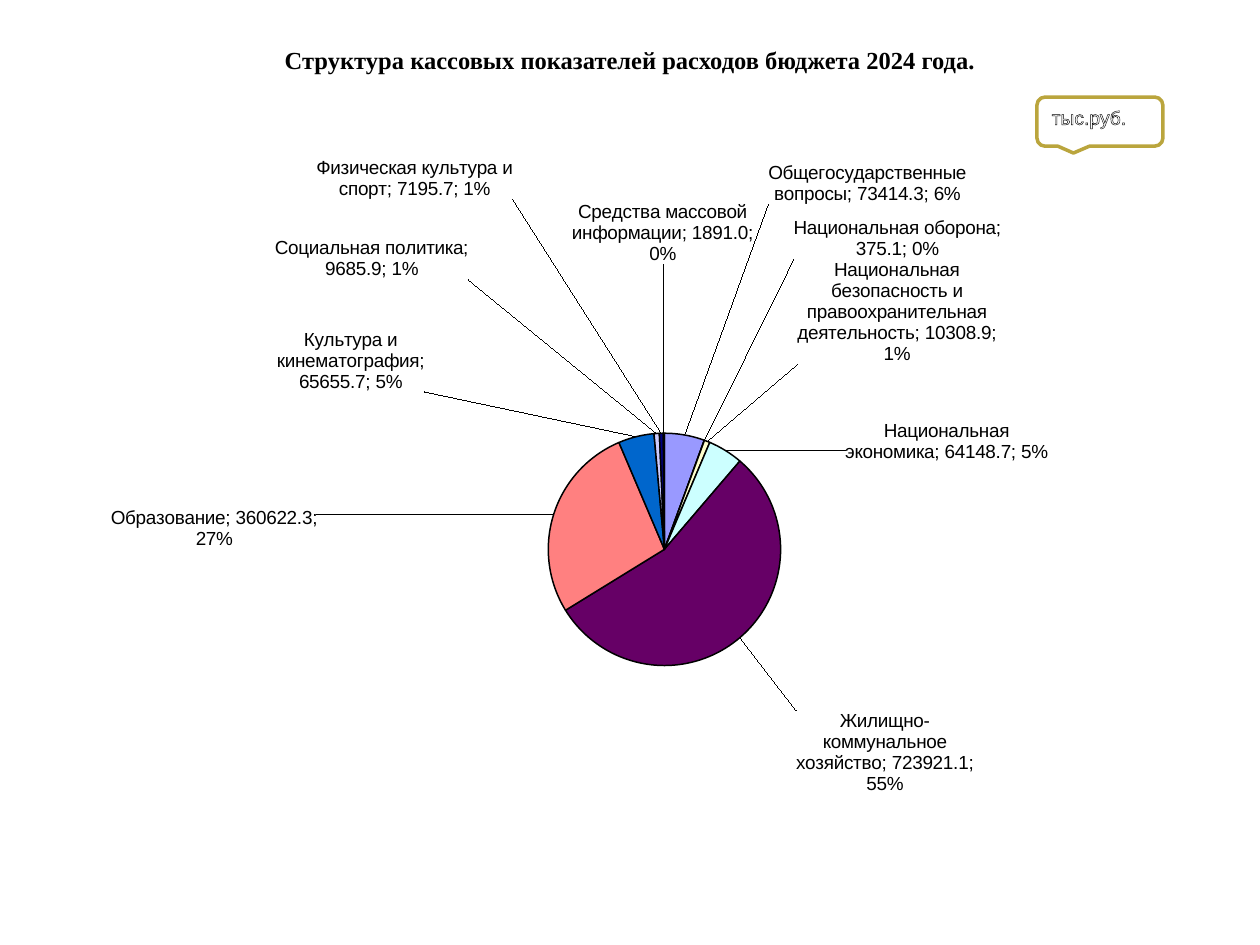
import copy
import math
from lxml import etree
from pptx import Presentation
from pptx import util as u
from pptx.chart import data as chart_data
from pptx.dml import color
from pptx.enum import chart as charts, shapes, text
from pptx.oxml import ns

COLORS = {"black": "000000", "white": "FFFFFF", "gold": "BAA53D"}
CHART_BOX = (0.88, 1.12, 8.41, 5.93)
PLOT = {"x": 0.284, "y": 0.391, "w": 0.477, "h": 0.311}
LABEL_GAP = 0.06

EXPENSES = [
    ("Общегосударственные вопросы", 73414.3, "9999FF", (6.1, 1.62)),
    ("Национальная оборона", 375.1, "FF9966", (6.3, 2.06)),
    ("Национальная безопасность и правоохранительная деятельность",
     10308.9, "FFFFCC", (6.33, 2.89)),
    ("Национальная экономика", 64148.7, "CCFFFF", (6.71, 3.67)),
    ("Жилищно-коммунальное хозяйство", 723921.1, "660066", (6.32, 5.64)),
    ("Образование", 360622.3, "FF8080", (2.51, 4.36)),
    ("Культура и кинематография", 65655.7, "0066CC", (3.37, 3.11)),
    ("Социальная политика", 9685.9, "CCCCFF", (2.95, 2.22)),
    ("Физическая культура и спорт", 7195.7, "000080", (3.29, 1.58)),
    ("Средства массовой информации", 1891.0, "000000", (5.26, 2.1)),
]


def rgb(value):
    return color.RGBColor.from_string(value)


def add_element(parent, tag, value=None):
    element = etree.SubElement(parent, ns.qn(tag))
    if value is not None:
        element.set("val", str(value))
    return element


def add_layout(parent, values):
    manual = add_element(add_element(parent, "c:layout"), "c:manualLayout")
    for name, value in values.items():
        add_element(manual, f"c:{name}", value)
    return manual.getparent()


def set_values(target, values):
    for name, value in values.items():
        setattr(target, name, value)


def label_offsets():
    left, top, width, height = CHART_BOX
    center_x = left + width * (PLOT["x"] + PLOT["w"] / 2)
    center_y = top + height * (PLOT["y"] + PLOT["h"] / 2)
    radius = height * PLOT["h"] / 2 + LABEL_GAP
    total = sum(expense[1] for expense in EXPENSES)
    passed = 0
    for _, value, _, (x, y) in EXPENSES:
        angle = 2 * math.pi * (passed + value / 2) / total
        passed += value
        yield {
            "x": round((x - center_x - radius * math.sin(angle)) / width, 4),
            "y": round((y - center_y + radius * math.cos(angle)) / height, 4),
        }


class SlideBuilder:
    def __init__(self, presentation):
        self.slide = presentation.slides.add_slide(presentation.slide_layouts[5])
        self.title_font = {"name": "Times New Roman", "size": u.Pt(14), "bold": True}
        self.body_font = {"name": "Arial", "size": u.Pt(11)}
        self.label_font = {"name": "Arial", "size": u.Pt(10.8)}

    def format_font(self, font, values, font_color):
        set_values(font, values)
        font.color.rgb = rgb(COLORS[font_color])

    def add_title(self, words, box):
        title = self.slide.shapes.title
        set_values(title, dict(zip(("left", "top", "width", "height"),
                                   map(u.Inches, box))))
        title.text_frame.vertical_anchor = text.MSO_ANCHOR.MIDDLE
        paragraph = title.text_frame.paragraphs[0]
        paragraph.alignment = text.PP_ALIGN.CENTER
        run = paragraph.add_run()
        run.text = words
        self.format_font(run.font, self.title_font, "black")

    def add_pie(self):
        data = chart_data.CategoryChartData(number_format="0.0")
        data.categories = [expense[0] for expense in EXPENSES]
        data.add_series("Series 1", [expense[1] for expense in EXPENSES])
        chart = self.slide.shapes.add_chart(
            charts.XL_CHART_TYPE.PIE, *map(u.Inches, CHART_BOX), data).chart
        set_values(chart, {"has_legend": False, "has_title": False})
        self.format_font(chart.font, self.label_font, "black")
        plot = chart.plots[0]
        plot.vary_by_categories = True
        series = plot.series[0]
        for index, expense in enumerate(EXPENSES):
            part = series.points[index].format
            part.fill.solid()
            part.fill.fore_color.rgb = rgb(expense[2])
            part.line.color.rgb = rgb(COLORS["black"])
            part.line.width = u.Pt(0.84)
        area = plot._element.getparent()
        for layout in area.findall(ns.qn("c:layout")):
            area.remove(layout)
        area.insert(0, add_layout(area, {"layoutTarget": "inner", "xMode": "edge",
                                         "yMode": "edge", **PLOT}))
        self.add_pie_labels(series)

    def add_pie_labels(self, series):
        labels = series.data_labels
        set_values(labels, {
            "show_value": True, "show_category_name": True, "show_percentage": True,
            "number_format": "0.0", "number_format_is_linked": True,
            "position": charts.XL_LABEL_POSITION.OUTSIDE_END,
        })
        self.format_font(labels.font, self.label_font, "black")
        group = labels._element
        separator = add_element(group, "c:separator")
        separator.text = "; "
        leader = group.find(ns.qn("c:showLeaderLines"))
        if leader is None:
            leader = add_element(group, "c:showLeaderLines")
        leader.set("val", "1")
        group.append(leader)
        shared = [child for child in group if child is not leader]
        for index, offset in enumerate(label_offsets()):
            label = add_element(group, "c:dLbl")
            add_element(label, "c:idx", index)
            add_layout(label, offset)
            label.extend(copy.deepcopy(shared))
            group.insert(index, label)

    def add_callout(self, words, box):
        shape = self.slide.shapes.add_shape(
            shapes.MSO_SHAPE.ROUNDED_RECTANGULAR_CALLOUT, *map(u.Inches, box))
        shape.shadow.inherit = False
        shape.adjustments[0] = -0.21
        shape.adjustments[1] = 0.64
        shape.fill.solid()
        shape.fill.fore_color.rgb = rgb(COLORS["white"])
        shape.line.color.rgb = rgb(COLORS["gold"])
        shape.line.width = u.Pt(2)
        shape.text_frame.vertical_anchor = text.MSO_ANCHOR.TOP
        paragraph = shape.text_frame.paragraphs[0]
        paragraph.alignment = text.PP_ALIGN.LEFT
        run = paragraph.add_run()
        run.text = words
        self.format_font(run.font, self.body_font, "white")
        outline = etree.Element(ns.qn("a:ln"), w=str(u.Pt(0.75)))
        add_element(add_element(outline, "a:solidFill"), "a:srgbClr", COLORS["black"])
        run.font._element.insert(0, outline)


def main():
    presentation = Presentation()
    set_values(presentation, {"slide_width": u.Inches(10),
                              "slide_height": u.Inches(7.5)})
    builder = SlideBuilder(presentation)
    builder.add_pie()
    builder.add_title("Структура кассовых показателей расходов бюджета 2024 года.",
                      (0.5, 0.3, 9, 0.35))
    builder.add_callout("тыс.руб.", (8.23, 0.77, 1, 0.39))
    presentation.save("out.pptx")


if __name__ == "__main__":
    main()
